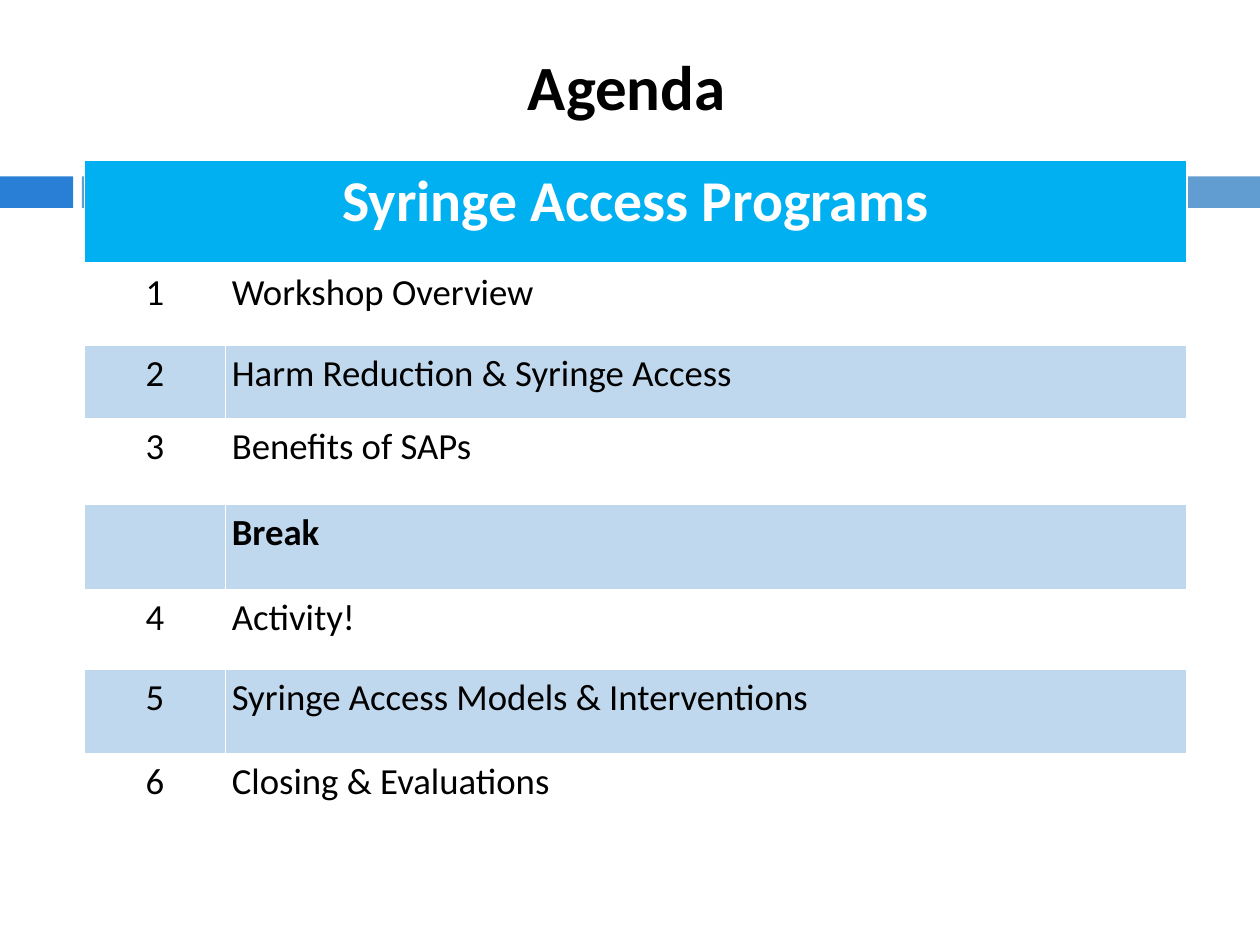
from typing import NamedTuple, Optional

from lxml.etree import SubElement
from pptx import Presentation
from pptx.dml.color import RGBColor
from pptx.enum.shapes import MSO_SHAPE
from pptx.enum.text import MSO_ANCHOR, PP_ALIGN
from pptx.oxml.ns import qn
from pptx.util import Emu, Inches, Pt

WHITE = RGBColor(0xFF, 0xFF, 0xFF)
BLACK = RGBColor(0x00, 0x00, 0x00)
BLUE = RGBColor(0x29, 0x7F, 0xD5)
STEEL = RGBColor(0x62, 0x9D, 0xD1)
CYAN = RGBColor(0x00, 0xB0, 0xF0)
PALE = RGBColor(0xC0, 0xD8, 0xED)

FONT = "Calibri"
WIDE, HIGH = Inches(10), Inches(7.5)
UNIT = WIDE / 100
PAD = Inches(0.05)


class Box(NamedTuple):
    left: float
    top: float
    width: float
    height: float


class Bar(NamedTuple):
    box: Box
    color: RGBColor


class Style(NamedTuple):
    size: float
    color: RGBColor = BLACK
    bold: bool = False
    align: PP_ALIGN = PP_ALIGN.LEFT


class Item(NamedTuple):
    mark: str
    label: str
    height: float
    bold: bool = False


BARS = [
    Bar(Box(0, 14, 5.8, 2.5), BLUE),
    Bar(Box(6.5, 14, 93.5, 2.5), STEEL),
]
TITLE = Box(23.7, 3.3, 52.1, 6.8)
GRID = Box(6.7, 12.7, 87.5, 54)
COLS = [11.2, 76.3]
HEAD = 8.3
ITEMS = [
    Item("1", "Workshop Overview", 6.4),
    Item("2", "Harm Reduction & Syringe Access", 5.8),
    Item("3", "Benefits of SAPs", 6.8),
    Item("", "Break", 6.8, True),
    Item("4", "Activity!", 6.3),
    Item("5", "Syringe Access Models & Interventions", 6.7),
    Item("6", "Closing & Evaluations", 6.9),
]


def span(count: float) -> Emu:
    return Emu(round(count * UNIT))


def place(box: Box) -> list[Emu]:
    return [span(side) for side in box]


def write(frame, text: str, style: Style) -> None:
    para = frame.paragraphs[0]
    para.alignment = style.align
    if not text:
        return
    run = para.add_run()
    run.text = text
    font = run.font
    font.name, font.size, font.bold = FONT, Pt(style.size), style.bold
    font.color.rgb = style.color


def pad(part) -> None:
    part.margin_left = part.margin_right = PAD
    part.margin_top = part.margin_bottom = PAD


def edge(cell, side: str, width: float) -> None:
    props = cell._tc.get_or_add_tcPr()
    line = SubElement(props, qn(f"a:ln{side}"), w=str(Pt(width)))
    fill = SubElement(line, qn("a:solidFill"))
    SubElement(fill, qn("a:srgbClr"), val=str(WHITE))


def dress(cell, row: int, fill: Optional[RGBColor]) -> None:
    pad(cell)
    cell.vertical_anchor = MSO_ANCHOR.TOP
    for side in "LRTB":
        thick = (row, side) in ((0, "B"), (1, "T"))
        edge(cell, side, 3 if thick else 1)
    if fill is None:
        cell.fill.background()
    else:
        cell.fill.solid()
        cell.fill.fore_color.rgb = fill


def draw_bar(slide, bar: Bar) -> None:
    shape = slide.shapes.add_shape(MSO_SHAPE.RECTANGLE, *place(bar.box))
    shape.shadow.inherit = False
    shape.fill.solid()
    shape.fill.fore_color.rgb = bar.color
    shape.line.fill.background()


def draw_table(slide) -> None:
    table = slide.shapes.add_table(
        len(ITEMS) + 1, len(COLS), *place(GRID)
    ).table
    table.first_row = table.horz_banding = False
    for col, width in zip(table.columns, COLS):
        col.width = span(width)
    for row, height in zip(table.rows, [HEAD] + [i.height for i in ITEMS]):
        row.height = span(height)

    head = table.cell(0, 0)
    head.merge(table.cell(0, 1))
    for col in range(len(COLS)):
        dress(table.cell(0, col), 0, CYAN)
    write(head.text_frame, "Syringe Access Programs",
          Style(33, WHITE, True, PP_ALIGN.CENTER))

    for row, item in enumerate(ITEMS, 1):
        fill = PALE if row % 2 == 0 else None
        pairs = ((item.mark, PP_ALIGN.CENTER), (item.label, PP_ALIGN.LEFT))
        for col, (text, align) in enumerate(pairs):
            cell = table.cell(row, col)
            dress(cell, row, fill)
            write(cell.text_frame, text, Style(21, BLACK, item.bold, align))


def draw_title(slide) -> None:
    frame = slide.shapes.add_textbox(*place(TITLE)).text_frame
    frame.word_wrap = True
    pad(frame)
    write(frame, "Agenda", Style(36, BLACK, True, PP_ALIGN.CENTER))


def main() -> None:
    deck = Presentation()
    deck.slide_width, deck.slide_height = WIDE, HIGH
    slide = deck.slides.add_slide(deck.slide_layouts[6])
    for bar in BARS:
        draw_bar(slide, bar)
    draw_table(slide)
    draw_title(slide)
    deck.save("out.pptx")


if __name__ == "__main__":
    main()
